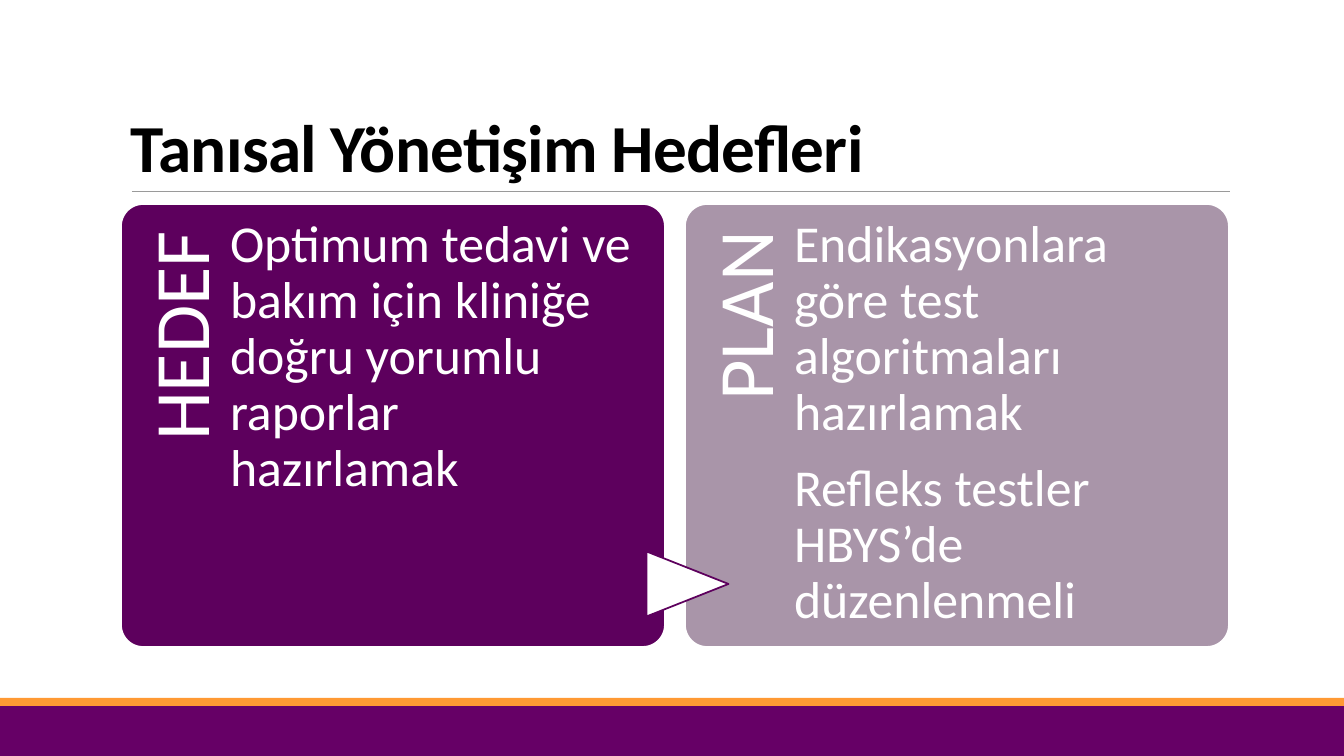
from pptx import Presentation
from pptx.dml.color import RGBColor
from pptx.enum.shapes import MSO_CONNECTOR, MSO_SHAPE
from pptx.enum.text import MSO_ANCHOR, MSO_AUTO_SIZE, PP_ALIGN
from pptx.util import Pt
from lxml.etree import SubElement
from pptx.oxml.ns import qn

TITLE = "Tanısal Yönetişim Hedefleri"
CARDS = [
    ("HEDEF", "purple", ["Optimum tedavi ve bakım için kliniğe doğru yorumlu raporlar hazırlamak"]),
    ("PLAN", "mauve", ["Endikasyonlara göre test algoritmaları hazırlamak",
                       "Refleks testler HBYS’de düzenlenmeli"]),
]
COLORS = {"purple": "5D005D", "mauve": "A995A9", "white": "FFFFFF", "black": "000000",
          "footer": "660066", "orange": "FF9933", "rule": "9A9A9A"}

SCALE = 914400 / 100.8
SLIDE_WIDTH, SLIDE_HEIGHT = 1344, 756
FOOTER_HEIGHT, STRIPE_HEIGHT = 50, 8
CARD_LEFT, CARD_TOP, CARD_WIDTH, CARD_HEIGHT, CARD_GAP = 121, 204, 544, 443, 20
LABEL_WIDTH, LABEL_HEIGHT = 364, 109
BODY_OFFSET, BODY_WIDTH = 109, 406


def px(*lengths):
    return [round(length * SCALE) for length in lengths]


def color(name):
    return RGBColor.from_string(COLORS[name])


def write(shape, paragraphs, size, name="white", bold=False, align=PP_ALIGN.LEFT,
          anchor=MSO_ANCHOR.TOP, spacing=0.9, after=0, insets=(0, 0, 0, 0), tracking=None):
    frame = shape.text_frame
    frame.word_wrap = True
    frame.auto_size = MSO_AUTO_SIZE.NONE
    frame.vertical_anchor = anchor
    frame.margin_left, frame.margin_top, frame.margin_right, frame.margin_bottom = px(*insets)
    for index, text in enumerate(paragraphs):
        paragraph = frame.add_paragraph() if index else frame.paragraphs[0]
        paragraph.alignment = align
        paragraph.line_spacing = spacing
        paragraph.space_before = Pt(0)
        paragraph.space_after = Pt(after)
        run = paragraph.add_run()
        run.text = text
        run.font.name = "Calibri"
        run.font.size = Pt(size)
        run.font.bold = bold
        run.font.color.rgb = color(name)
        if tracking:
            run.font._element.set("spc", str(tracking))


def add_block(kind, box, fill, line=None):
    shape = slide.shapes.add_shape(kind, *px(*box))
    shape.shadow.inherit = False
    shape.fill.solid()
    shape.fill.fore_color.rgb = color(fill)
    if line:
        shape.line.color.rgb = color(line)
        shape.line.width = Pt(1.25)
    else:
        shape.line.fill.background()
    return shape


presentation = Presentation()
presentation.slide_width, presentation.slide_height = px(SLIDE_WIDTH, SLIDE_HEIGHT)
slide = presentation.slides.add_slide(presentation.slide_layouts[5])

footer_top = SLIDE_HEIGHT - FOOTER_HEIGHT
add_block(MSO_SHAPE.RECTANGLE, (0, footer_top, SLIDE_WIDTH, FOOTER_HEIGHT), "footer")
add_block(MSO_SHAPE.RECTANGLE, (0, footer_top - STRIPE_HEIGHT, SLIDE_WIDTH, STRIPE_HEIGHT), "orange")

rule = slide.shapes.add_connector(MSO_CONNECTOR.STRAIGHT, *px(132, 191, 1230, 191))
rule.line.color.rgb = color("rule")
rule.line.width = Pt(0.5)
SubElement(rule._element.spPr, qn("a:effectLst"))

title = slide.shapes.title
title.left, title.top, title.width, title.height = px(121, 31, 1109, 160)
write(title, [TITLE], 48, "black", bold=True, anchor=MSO_ANCHOR.BOTTOM,
      spacing=0.85, insets=(10, 5, 10, 5), tracking=-50)

for index, (heading, fill, paragraphs) in enumerate(CARDS):
    left = CARD_LEFT + index * (CARD_WIDTH + CARD_GAP)
    card = add_block(MSO_SHAPE.ROUNDED_RECTANGLE, (left, CARD_TOP, CARD_WIDTH, CARD_HEIGHT), fill, "white")
    card.adjustments[0] = 0.05

    label_left = left + (LABEL_HEIGHT - LABEL_WIDTH) / 2
    label_top = CARD_TOP + (LABEL_WIDTH - LABEL_HEIGHT) / 2
    label = slide.shapes.add_textbox(*px(label_left, label_top, LABEL_WIDTH, LABEL_HEIGHT))
    label.rotation = 270
    write(label, [heading], 56, align=PP_ALIGN.RIGHT, insets=(0, 21, 27, 0))

    body = slide.shapes.add_textbox(*px(left + BODY_OFFSET, CARD_TOP, BODY_WIDTH, CARD_HEIGHT))
    write(body, paragraphs, 37, after=14.5, insets=(0, 14, 0, 0))

arrow = add_block(MSO_SHAPE.FLOWCHART_EXTRACT, (655, 543, 65, 82), "white", "purple")
arrow.rotation = 90

presentation.save("out.pptx")
